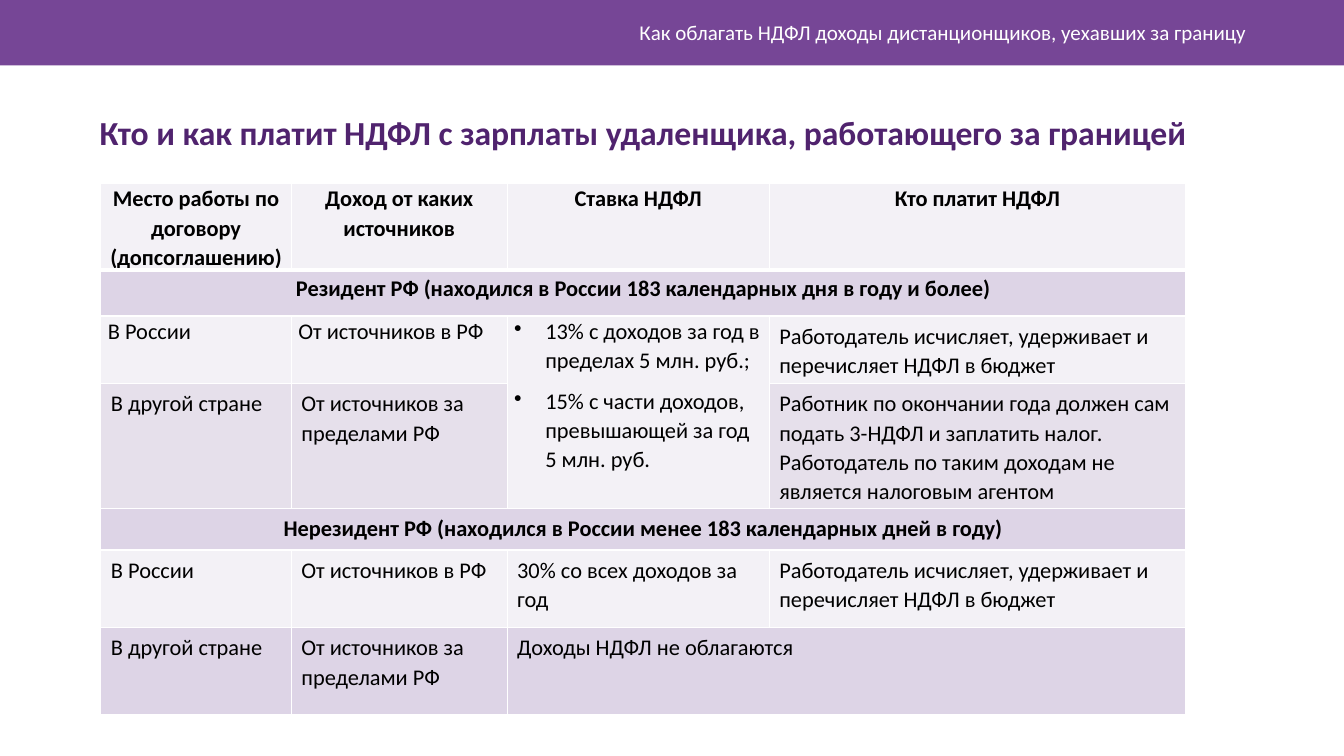
from pptx import Presentation
from pptx.dml.color import RGBColor
from pptx.enum.shapes import MSO_SHAPE as SHAPE
from pptx.enum.text import MSO_ANCHOR as ANCHOR, PP_ALIGN as ALIGN
from pptx.oxml.xmlchemy import OxmlElement
from pptx.util import Inches, Pt

FONT = "Calibri"
WHITE = RGBColor(0xFF, 0xFF, 0xFF)
BLACK = RGBColor(0, 0, 0)
BAND = RGBColor(0x76, 0x46, 0x96)
TITLE = RGBColor(0x50, 0x23, 0x6E)
PALE = RGBColor(0xF3, 0xF1, 0xF6)
GREY = RGBColor(0xE6, 0xE0, 0xEB)
LILAC = RGBColor(0xDD, 0xD4, 0xE6)

COL_WIDTHS = [1.89, 2.14, 2.6, 4.13]
ROW_HEIGHTS = [0.81, 0.46, 0.67, 1.18, 0.41, 0.77, 0.86]
ROW_FILLS = [PALE, LILAC, PALE, GREY, LILAC, PALE, LILAC]
HEADER_ROW, GROUP_ROWS = 0, (1, 4)
TIGHT_CELLS = {(0, 0), (0, 1), (0, 2), (0, 3), (2, 0), (2, 1), (2, 2)}
# First and last cell of each merged area
MERGES = [((1, 0), (1, 3)), ((2, 2), (3, 2)), ((4, 0), (4, 3)), ((6, 2), (6, 3))]

HOME, ABROAD = "В России", "В другой стране"
FROM_RF, FROM_ABROAD = "От источников в РФ", "От источников за пределами РФ"
EMPLOYER_PAYS = "Работодатель исчисляет, удерживает и перечисляет НДФЛ в бюджет"
RATES = ["13% с доходов за год в пределах 5 млн. руб.;",
         "15% с части доходов, превышающей за год 5 млн. руб."]
ROWS = [
    ["Место работы по договору (допсоглашению)", "Доход от каких источников",
     "Ставка НДФЛ", "Кто платит НДФЛ"],
    ["Резидент РФ (находился в России 183 календарных дня в году и более)",
     None, None, None],
    [HOME, FROM_RF, RATES, EMPLOYER_PAYS],
    [ABROAD, FROM_ABROAD, None,
     "Работник по окончании года должен сам подать 3-НДФЛ и заплатить налог. "
     "Работодатель по таким доходам не является налоговым агентом"],
    ["Нерезидент РФ (находился в России менее 183 календарных дней в году)",
     None, None, None],
    [HOME, FROM_RF, "30% со всех доходов за год", EMPLOYER_PAYS],
    [ABROAD, FROM_ABROAD, "Доходы НДФЛ не облагаются", None],
]


def set_attrs(obj, values):
    for name, value in values.items():
        setattr(obj, name, value)


def write(p, text, size, color, bold=False, **layout):
    set_attrs(p, layout)
    r = p.add_run()
    r.text = text
    set_attrs(r.font, {"name": FONT, "size": Pt(size), "bold": bold})
    r.font.color.rgb = color


def add_text(s, box, text, size, color, bold=False, anchor=ANCHOR.TOP, **layout):
    tf = s.shapes.add_textbox(*map(Inches, box)).text_frame
    set_attrs(tf, {"word_wrap": True, "vertical_anchor": anchor})
    write(tf.paragraphs[0], text, size, color, bold, **layout)


def add_band(s, box, color):
    sp = s.shapes.add_shape(SHAPE.RECTANGLE, *map(Inches, box))
    sp.shadow.inherit = False
    sp.fill.solid()
    sp.fill.fore_color.rgb = color
    sp.line.fill.background()


def add_bullet(p):
    pPr = p._p.get_or_add_pPr()
    pPr.set("marL", str(Inches(0.31)))
    pPr.set("indent", str(-Inches(0.31)))
    bullet = OxmlElement("a:buChar")
    bullet.set("char", "•")
    pPr.append(bullet)


def set_borders(cell, widths):
    tcPr = cell._tc.get_or_add_tcPr()
    for side, width in widths.items():
        ln = OxmlElement(f"a:ln{side}")
        ln.set("w", str(Pt(width)))
        fill = OxmlElement("a:solidFill")
        color = OxmlElement("a:srgbClr")
        color.set("val", str(WHITE))
        fill.append(color)
        ln.append(fill)
        tcPr.append(ln)


def fill_cell(cell, row, col, content):
    # Frame and background
    set_borders(cell, {"L": 1, "R": 1, "T": 3 if row == HEADER_ROW + 1 else 1,
                       "B": 3 if row == HEADER_ROW else 1})
    cell.fill.solid()
    rates_below = (row, col) == (3, 2)
    cell.fill.fore_color.rgb = PALE if rates_below else ROW_FILLS[row]
    side, edge = (0.07, 0) if (row, col) in TIGHT_CELLS else (0.1, 0.05)
    set_attrs(cell, {"margin_left": Inches(side), "margin_right": Inches(side),
                     "margin_top": Inches(edge), "margin_bottom": Inches(edge)})
    if content is None:
        return

    # Text, bulleted when the content is a list
    heading = row == HEADER_ROW or row in GROUP_ROWS
    bulleted = isinstance(content, list)
    tf = cell.text_frame
    for i, text in enumerate(content if bulleted else [content]):
        p = tf.add_paragraph() if i else tf.paragraphs[0]
        if bulleted:
            add_bullet(p)
        write(p, text, 16, BLACK, heading,
              alignment=ALIGN.CENTER if heading else ALIGN.LEFT,
              line_spacing=1.0 if row == GROUP_ROWS[0] else 1.07,
              space_after=Pt(0 if row == GROUP_ROWS[0] else 8))


def add_tax_table(s, left, top):
    size = Inches(sum(COL_WIDTHS)), Inches(sum(ROW_HEIGHTS))
    table = s.shapes.add_table(len(ROWS), len(COL_WIDTHS),
                               Inches(left), Inches(top), *size).table
    for column, width in zip(table.columns, COL_WIDTHS):
        column.width = Inches(width)
    for row, height in zip(table.rows, ROW_HEIGHTS):
        row.height = Inches(height)
    for first, last in MERGES:
        table.cell(*first).merge(table.cell(*last))
    for i, contents in enumerate(ROWS):
        for j, content in enumerate(contents):
            fill_cell(table.cell(i, j), i, j, content)


def main():
    prs = Presentation()
    set_attrs(prs, {"slide_width": Inches(13.33), "slide_height": Inches(7.5)})
    s = prs.slides.add_slide(prs.slide_layouts[6])

    # Top band with the topic
    add_band(s, (0, 0, 13.33, 0.65), BAND)
    add_text(s, (3.58, 0.12, 8.88, 0.4),
             "Как облагать НДФЛ доходы дистанционщиков, уехавших за границу",
             15, WHITE, anchor=ANCHOR.MIDDLE, alignment=ALIGN.RIGHT)

    # Title and table
    add_text(s, (0.89, 1.11, 12.03, 0.55),
             "Кто и как платит НДФЛ с зарплаты удаленщика, работающего за границей",
             24, TITLE, bold=True, line_spacing=0.9)
    add_tax_table(s, 1, 1.82)

    prs.save("out.pptx")


if __name__ == "__main__":
    main()
